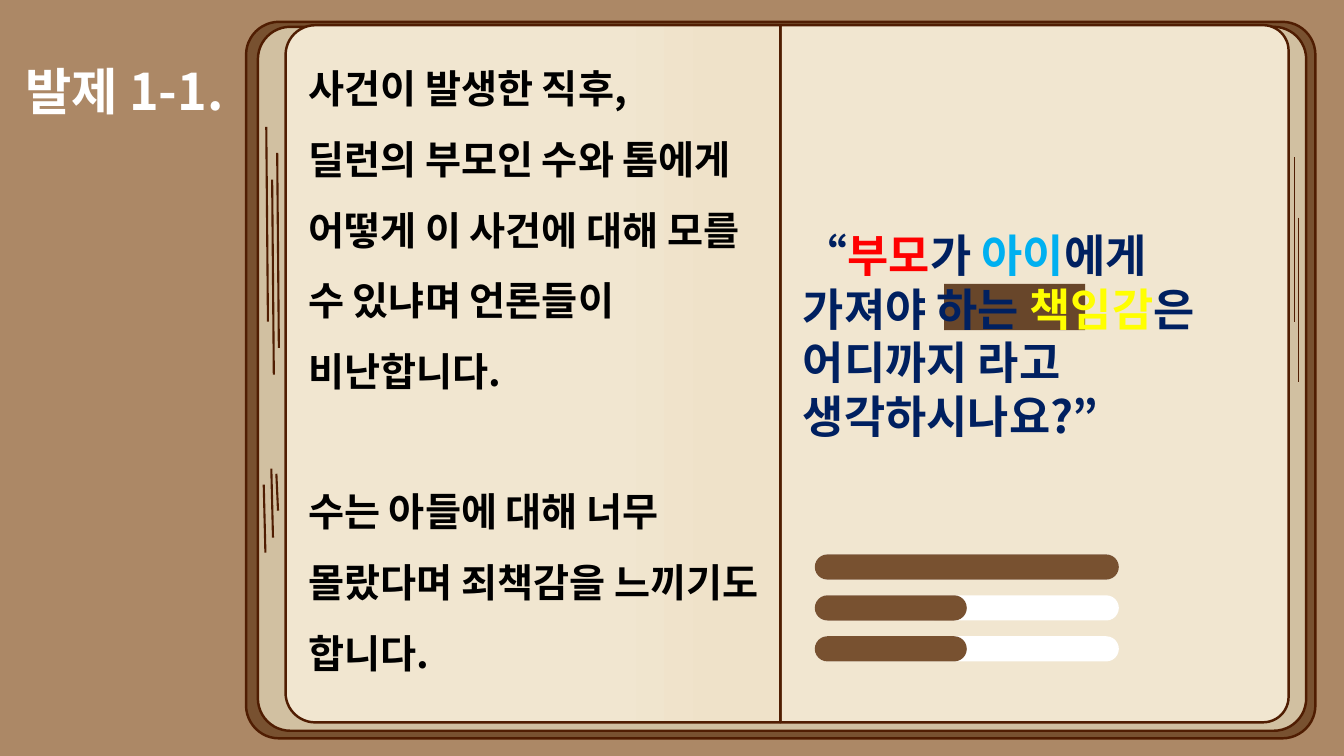
import pptx
import pptx.util
import pptx.dml.color
import pptx.enum.shapes
import pptx.enum.text
import pptx.oxml
import pptx.oxml.ns

SHAPE = pptx.enum.shapes.MSO_SHAPE
ANCHOR = pptx.enum.text.MSO_ANCHOR
COLUMNS, ROWS = 160, 90
INK, BROWN, PAPER, NAVY = "501D02", "785130", "F1E6D0", "002060"


def colour(code):
    return pptx.dml.color.RGBColor.from_string(code)


def add_text(para, text, size=28, color="000000", bold=True, font="Noto Sans CJK KR"):
    span = para.add_run()
    span.text = text
    span.font.size = pptx.util.Pt(size)
    span.font.bold = bold
    span.font.name = font
    span.font.color.rgb = colour(color)
    east_asian = pptx.oxml.ns.qn("a:ea")
    span.font._element.makeelement(east_asian)
    latin = span.font._element.find(pptx.oxml.ns.qn("a:latin"))
    latin.addnext(latin.makeelement(east_asian, {"typeface": font}))


class BookSlide:
    """Draws on one slide; lengths are columns and rows of a 160 by 90 grid."""

    def __init__(self, deck, background):
        self.column = deck.slide_width / COLUMNS
        self.row = deck.slide_height / ROWS
        self.page = deck.slides.add_slide(deck.slide_layouts[6])
        self.page.background.fill.solid()
        self.page.background.fill.fore_color.rgb = colour(background)

    def place(self, *lengths):
        """Turns alternating columns and rows into slide units."""
        return [round(length * (self.row if index % 2 else self.column))
                for index, length in enumerate(lengths)]

    def shape(self, kind, at, fill, line=None, adjust=()):
        box = self.page.shapes.add_shape(kind, *self.place(*at))
        box.shadow.inherit = False
        for index, value in enumerate(adjust):
            box.adjustments[index] = value
        box.fill.solid()
        box.fill.fore_color.rgb = colour(fill)
        if line:
            box.line.color.rgb = colour(line)
            box.line.width = pptx.util.Pt(1.75)
        else:
            box.line.fill.background()
        return box

    def leaf(self, at, turn, corner):
        """A book page whose rounded side is turned outwards."""
        box = self.shape(SHAPE.ROUND_2_SAME_RECTANGLE, at, PAPER, INK, (corner, 0))
        across, down = box.width, box.height
        box.left += (across - down) // 2
        box.top += (down - across) // 2
        box.width, box.height = down, across
        box.rotation = turn
        return box

    def shade(self, box, stops, angle):
        box.fill.gradient()
        box.fill.gradient_angle = angle
        for stop, (position, code) in zip(box.fill.gradient_stops, stops):
            stop.position = position
            stop.color.rgb = colour(code)

    def stroke(self, left, top, slant, length, width):
        ends = self.place(left, top, left + slant, top + length)
        line = self.page.shapes.add_connector(
            pptx.enum.shapes.MSO_CONNECTOR.STRAIGHT, *ends)
        line.line.color.rgb = colour(INK)
        line.line.width = pptx.util.Pt(width)
        line._element.spPr.append(pptx.oxml.parse_xml(
            "<a:effectLst %s/>" % pptx.oxml.ns.nsdecls("a")))

    def bar(self, top, share):
        for part, fill in ((1, "FFFFFF"), (share, BROWN)):
            if part == share or share < 1:
                self.shape(SHAPE.ROUNDED_RECTANGLE, (97, top, 36.2 * part, 3),
                           fill, adjust=(0.5,))

    def text(self, at, paragraphs, spacing=1.0, gap=0, anchor=ANCHOR.TOP, **style):
        """Each paragraph is a list of (text, colour); gap goes above the last one."""
        frame = self.page.shapes.add_textbox(*self.place(*at)).text_frame
        frame.word_wrap = True
        frame.vertical_anchor = anchor
        for index, spans in enumerate(paragraphs):
            para = frame.add_paragraph() if index else frame.paragraphs[0]
            para.line_spacing = spacing
            for words, code in spans:
                add_text(para, words, color=code, **style)
        if gap:
            para.space_before = pptx.util.Pt(gap)


def main():
    deck = pptx.Presentation()
    deck.slide_width = pptx.util.Inches(13.33)
    deck.slide_height = pptx.util.Inches(7.5)
    book = BookSlide(deck, "AC8866")

    for at, fill in (((29.3, 2.6, 127.3, 85.3), BROWN),
                     ((30.7, 3.2, 124.8, 83.8), "D1C0A1")):
        book.shape(SHAPE.ROUNDED_RECTANGLE, at, fill, INK, (0.046,))
    book.leaf((92.9, 3, 60.5, 83), 90, 0.05)
    left_leaf = book.leaf((34, 3, 58.9, 83), 270, 0.06)
    book.shade(left_leaf, ((0.65, PAPER), (0.88, "EFE2C9")), 270)

    for left, top, length in ((31.7, 15.1, 23.2), (33, 18.2, 23.2), (32.4, 21.4, 23.2),
                              (31.4, 57.7, 8.1), (32.9, 56.4, 4.4), (32.3, 55.8, 8.2)):
        book.stroke(left, top, 0.2, length, 1.5)
    for left, top in ((154.1, 18.7), (154.6, 25.9)):
        book.stroke(left, top, 0, 19.6, 1)

    for index, share in enumerate((1, 0.5, 0.5)):
        book.bar(66 + 4.87 * index, share)

    book.text((1.8, 3, 37.3, 20.6), [[("발제 1-1.", "FFFFFF")]], spacing=1.5, size=36)
    story = ("사건이 발생한 직후,",
             "딜런의 부모인 수와 톰에게 어떻게 이 사건에 대해 모를 수 있냐며 언론들이 비난합니다.",
             "수는 아들에 대해 너무 몰랐다며 죄책감을 느끼기도 합니다.")
    book.text((35.5, 11.5, 57.5, 62.4), [[(words, "000000")] for words in story],
              spacing=1.5, gap=50, anchor=ANCHOR.MIDDLE)

    book.shape(SHAPE.RECTANGLE, (112.4, 33.8, 16.8, 5.5), "68462A")
    question = [("“", NAVY), ("부모", "FF0000"), ("가 ", NAVY), ("아이", "00B0F0"),
                ("에게 가져야 하는 ", NAVY), ("책임감", "FFFF00"),
                ("은 어디까지 라고 생각하시나요?”", NAVY)]
    book.text((94.4, 26.5, 56.4, 27.1), [question], size=32)

    deck.save("out.pptx")


if __name__ == "__main__":
    main()
